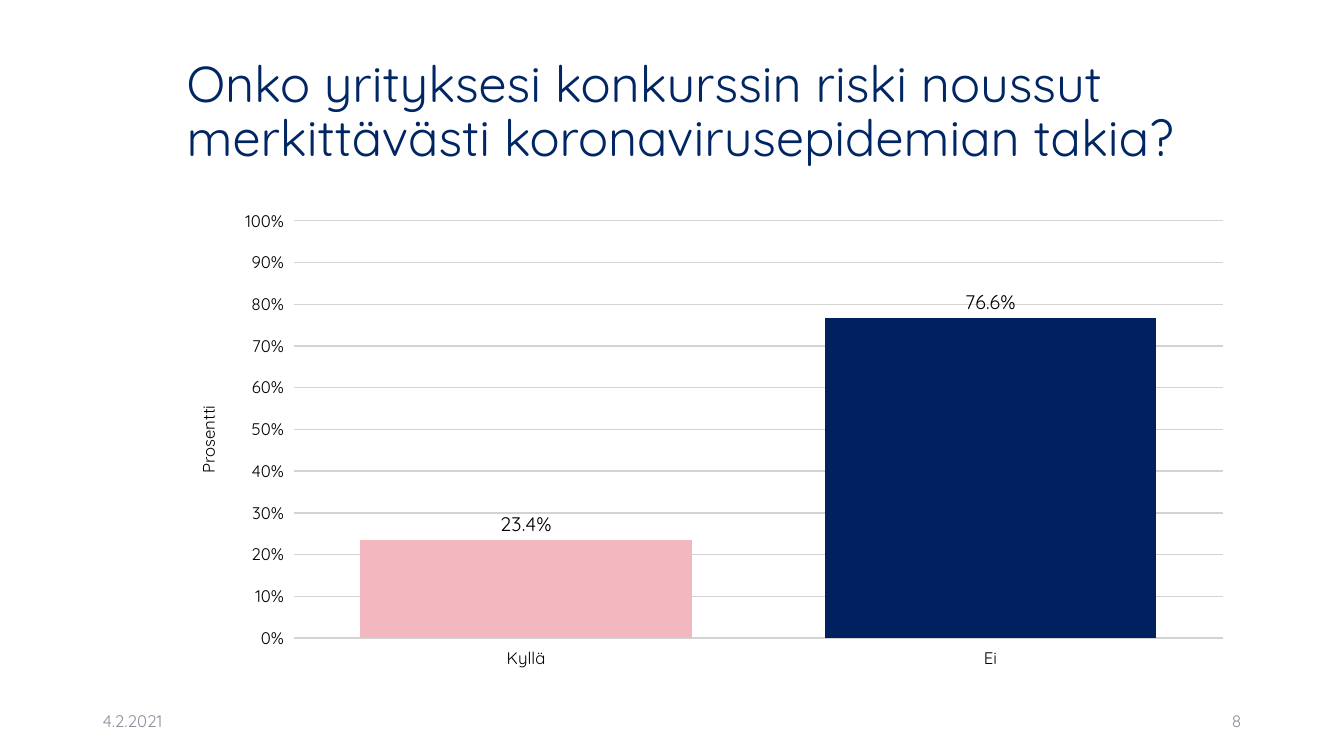
"""Build a slide with a column chart on bankruptcy risk during the epidemic."""
import lxml.etree
import pptx
import pptx.chart.data
import pptx.dml.color
import pptx.enum.chart
import pptx.enum.text
import pptx.oxml.ns
import pptx.util

THEME = {
    "font": "Quicksand",
    "title": ("002663", 36),
    "footer": ("8C8E9F", 12),
    "axis": ("000000", 12),
    "label": ("000000", 14),
    "bars": ("F2B7BF", "002060"),
    "grid": "D3D3D3",
    "background": "FFFFFF",
}


def color(value):
    return pptx.dml.color.RGBColor.from_string(value)


def style(font, role):
    value, size = THEME[role]
    font.name = THEME["font"]
    font.size = pptx.util.Pt(size)
    font.bold = False
    font.color.rgb = color(value)


presentation = pptx.Presentation()
presentation.slide_width = pptx.util.Inches(13.33)
presentation.slide_height = pptx.util.Inches(7.5)
slide = presentation.slides.add_slide(presentation.slide_layouts[5])
slide.background.fill.solid()
slide.background.fill.fore_color.rgb = color(THEME["background"])

content_left = pptx.util.Inches(1.75)
content_width = pptx.util.Inches(10.59)

title = slide.shapes.title
title.left, title.width = content_left, content_width
title.top, title.height = pptx.util.Inches(0.4), pptx.util.Inches(1.45)
title.text_frame.text = "Onko yrityksesi konkurssin riski noussut merkittävästi koronavirusepidemian takia?"
title.text_frame.auto_size = pptx.enum.text.MSO_AUTO_SIZE.NONE
title.text_frame.vertical_anchor = pptx.enum.text.MSO_ANCHOR.MIDDLE
paragraph = title.text_frame.paragraphs[0]
paragraph.alignment = pptx.enum.text.PP_ALIGN.LEFT
paragraph.line_spacing = 0.9
style(paragraph.runs[0].font, "title")

footer_width = pptx.util.Inches(3)
margin = pptx.util.Inches(0.92)
footers = (
    ("4.2.2021", margin, pptx.enum.text.PP_ALIGN.LEFT),
    ("8", presentation.slide_width - margin - footer_width, pptx.enum.text.PP_ALIGN.RIGHT),
)
for text, left, alignment in footers:
    footer = slide.shapes.add_textbox(left, pptx.util.Inches(6.95), footer_width, pptx.util.Inches(0.4))
    footer.text_frame.word_wrap = True
    footer.text_frame.vertical_anchor = pptx.enum.text.MSO_ANCHOR.MIDDLE
    footer.text_frame.text = text
    paragraph = footer.text_frame.paragraphs[0]
    paragraph.alignment = alignment
    style(paragraph.runs[0].font, "footer")

chart_data = pptx.chart.data.CategoryChartData(number_format="0.0%")
chart_data.categories = ("Kyllä", "Ei")
chart_data.add_series("Series 1", (0.234, 0.766))
chart = slide.shapes.add_chart(
    pptx.enum.chart.XL_CHART_TYPE.COLUMN_CLUSTERED,
    content_left, pptx.util.Inches(2), content_width, pptx.util.Inches(4.76), chart_data,
).chart
chart.has_title = False
chart.has_legend = False
style(chart.font, "axis")

for axis in (chart.category_axis, chart.value_axis):
    axis.major_tick_mark = pptx.enum.chart.XL_TICK_MARK.OUTSIDE
    axis.format.line.fill.background()
    style(axis.tick_labels.font, "axis")

value_axis = chart.value_axis
value_axis.minimum_scale, value_axis.maximum_scale, value_axis.major_unit = 0, 1, 0.1
value_axis.tick_labels.number_format = "0%"
value_axis.tick_labels.number_format_is_linked = False
value_axis.major_gridlines.format.line.color.rgb = color(THEME["grid"])
value_axis.major_gridlines.format.line.width = pptx.util.Pt(1)
value_axis.axis_title.text_frame.text = "Prosentti"
style(value_axis.axis_title.text_frame.paragraphs[0].runs[0].font, "axis")

plot = chart.plots[0]
plot.gap_width = 40
plot.vary_by_categories = False
plot.has_data_labels = True
labels = plot.data_labels
labels.show_value = True
labels.position = pptx.enum.chart.XL_LABEL_POSITION.OUTSIDE_END
labels.number_format = "0.0%"
labels.number_format_is_linked = False
style(labels.font, "label")

series = plot.series[0]
series.format.fill.solid()
series.format.fill.fore_color.rgb = color(THEME["bars"][1])
first_bar = series.points[0].format.fill
first_bar.solid()
first_bar.fore_color.rgb = color(THEME["bars"][0])

qualified = pptx.oxml.ns.qn
plot_area = chart.element.find(".//" + qualified("c:plotArea"))
layout = plot_area.find(qualified("c:layout"))
if layout is None:
    layout = lxml.etree.Element(qualified("c:layout"))
    plot_area.insert(0, layout)
manual = lxml.etree.SubElement(layout, qualified("c:manualLayout"))
settings = (
    ("layoutTarget", "inner"), ("xMode", "edge"), ("yMode", "edge"),
    ("x", "0.11"), ("y", "0.04"), ("w", "0.87"), ("h", "0.87"),
)
for tag, value in settings:
    lxml.etree.SubElement(manual, qualified("c:" + tag)).set("val", value)

presentation.save("out.pptx")
